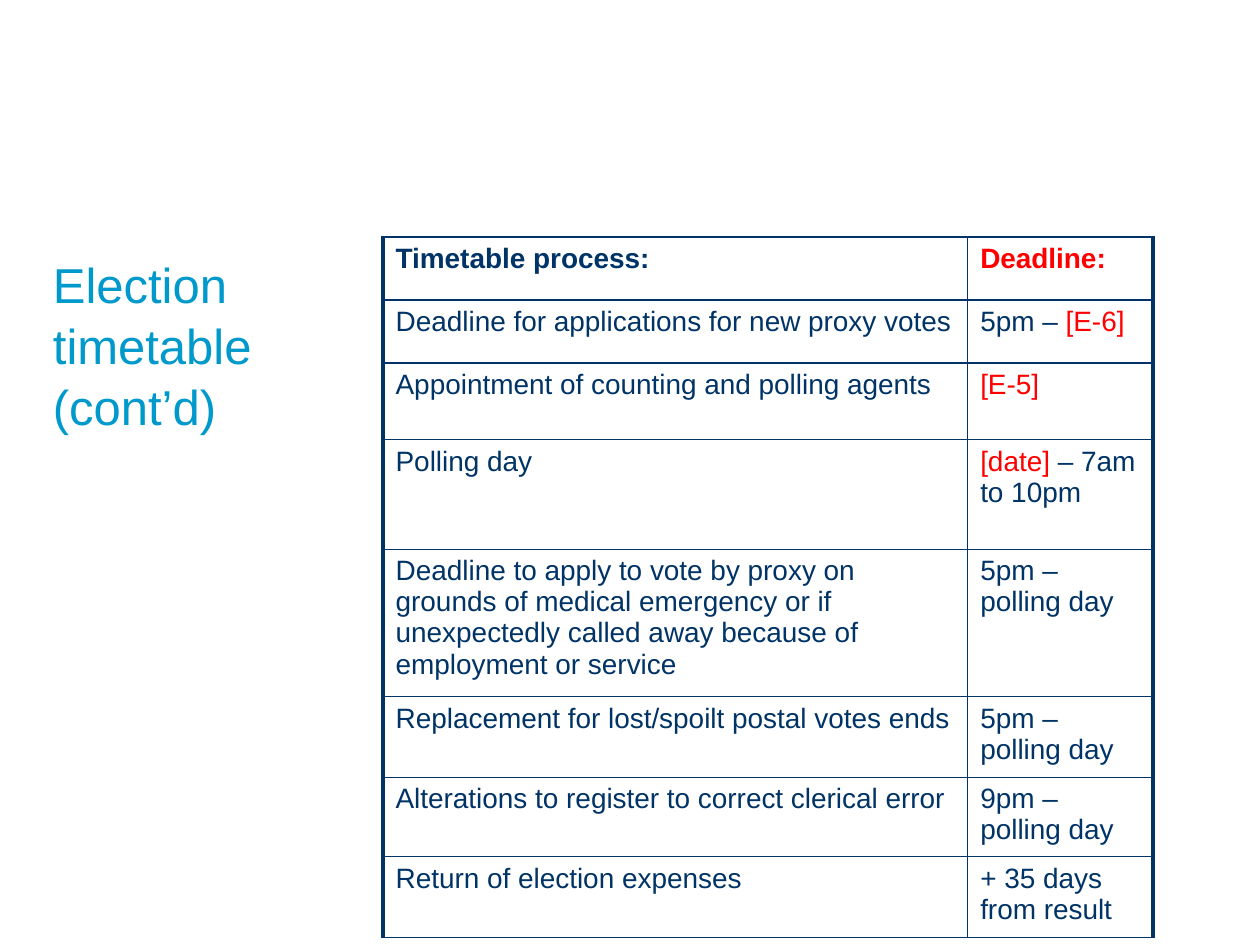
from dataclasses import dataclass

from lxml import etree
from pptx import Presentation
from pptx.dml.color import RGBColor
from pptx.enum import text
from pptx.oxml import ns
from pptx.util import Pt

SCALE = 9144
NAVY, RED, BLUE = "003366", "FF0000", "0099CC"
COLS = (464, 147)


@dataclass
class Run:
    words: str
    color: str = NAVY


@dataclass
class Row:
    high: int
    task: list[Run]
    due: list[Run]
    bold: bool = False


ROWS = [
    Row(50, [Run("Timetable process:")], [Run("Deadline:", RED)], True),
    Row(50, [Run("Deadline for applications for new proxy votes")],
        [Run("5pm – "), Run("[E-6]", RED)]),
    Row(61, [Run("Appointment of counting and polling agents")],
        [Run("[E-5]", RED)]),
    Row(87, [Run("Polling day")],
        [Run("[date]", RED), Run(" – 7am to 10pm")]),
    Row(117, [Run("Deadline to apply to vote by proxy on grounds of medical "
                  "emergency or if unexpectedly called away because of "
                  "employment or service")],
        [Run("5pm – polling day")]),
    Row(64, [Run("Replacement for lost/spoilt postal votes ends")],
        [Run("5pm – polling day")]),
    Row(63, [Run("Alterations to register to correct clerical error")],
        [Run("9pm – polling day")]),
    Row(64, [Run("Return of election expenses")],
        [Run("+ 35 days from result")]),
]


def px(num: int) -> int:
    return num * SCALE


def rgb(color: str) -> RGBColor:
    return RGBColor.from_string(color)


def write(para, runs: list[Run], size: int, bold: bool = False) -> None:
    for item in runs:
        run = para.add_run()
        run.text = item.words
        font = run.font
        font.name, font.size, font.bold = "Arial", Pt(size), bold
        font.color.rgb = rgb(item.color)


def edge(cell, side: str, width: float) -> None:
    props = cell._tc.get_or_add_tcPr()
    line = etree.SubElement(props, ns.qn(f"a:ln{side}"), w=str(Pt(width)))
    fill = etree.SubElement(line, ns.qn("a:solidFill"))
    etree.SubElement(fill, ns.qn("a:srgbClr"), val=NAVY)


def draw_title(slide) -> None:
    title = slide.shapes.title
    title.left, title.top = px(42), px(200)
    title.width, title.height = px(275), px(467)
    frame = title.text_frame
    frame.margin_left = frame.margin_right = 0
    frame.margin_top = frame.margin_bottom = 0
    frame.word_wrap = True
    frame.auto_size = text.MSO_AUTO_SIZE.NONE
    frame.vertical_anchor = text.MSO_ANCHOR.TOP
    para = frame.paragraphs[0]
    para.alignment = text.PP_ALIGN.LEFT
    para.line_spacing = 1.04
    write(para, [Run("Election timetable (cont’d)", BLUE)], 28)


def draw_cell(cell, runs: list[Run], bold: bool, outer: str) -> None:
    for side in "LRTB":
        edge(cell, side, 2.25 if side == outer else 1)
    cell.fill.background()
    cell.margin_left = cell.margin_right = px(10)
    cell.margin_top = cell.margin_bottom = px(5)
    write(cell.text_frame.paragraphs[0], runs, 16, bold)


def draw_table(slide) -> None:
    high = sum(row.high for row in ROWS)
    frame = slide.shapes.add_table(len(ROWS), len(COLS), px(304), px(188),
                                   px(sum(COLS)), px(high))
    table = frame.table
    table.first_row = table.horz_banding = False
    for col, width in zip(table.columns, COLS):
        col.width = px(width)
    for i, row in enumerate(ROWS):
        table.rows[i].height = px(row.high)
        draw_cell(table.cell(i, 0), row.task, row.bold, "L")
        draw_cell(table.cell(i, 1), row.due, row.bold, "R")


def main() -> None:
    deck = Presentation()
    deck.slide_width, deck.slide_height = px(1000), px(750)
    slide = deck.slides.add_slide(deck.slide_layouts[5])
    draw_title(slide)
    draw_table(slide)
    deck.save("out.pptx")


if __name__ == "__main__":
    main()
